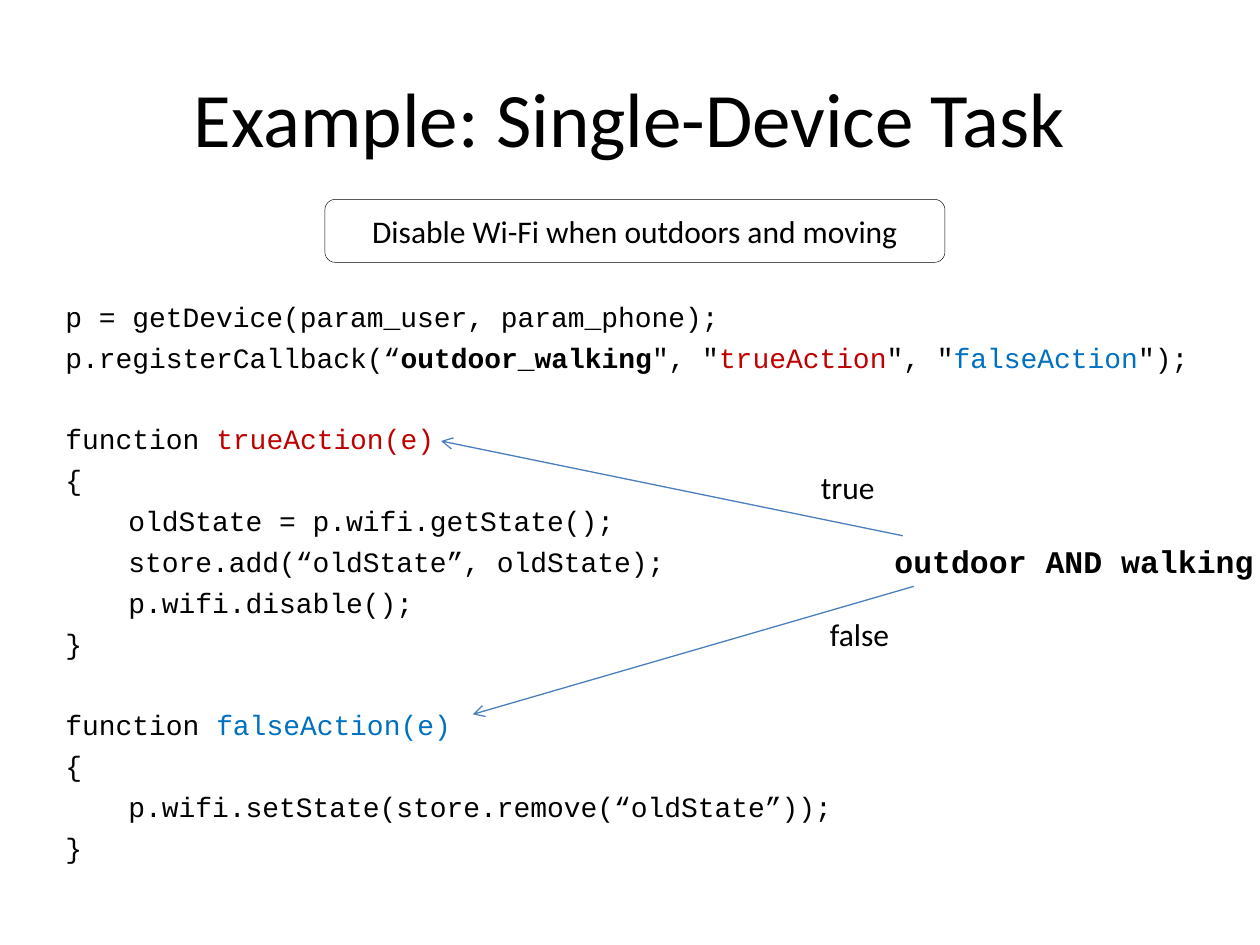
"""Build a slide that explains a single-device task with annotated callback code."""
from dataclasses import dataclass

from lxml import etree
from pptx import Presentation
from pptx.dml.color import RGBColor
from pptx.enum.shapes import MSO_CONNECTOR, MSO_SHAPE
from pptx.enum.text import MSO_ANCHOR, PP_ALIGN
from pptx.oxml.ns import qn
from pptx.util import Cm, Pt

ROUNDED = MSO_SHAPE.ROUNDED_RECTANGLE
STRAIGHT = MSO_CONNECTOR.STRAIGHT
MIDDLE = MSO_ANCHOR.MIDDLE
TOP = MSO_ANCHOR.TOP
CENTER = PP_ALIGN.CENTER
LEFT = PP_ALIGN.LEFT
BLANK_LAYOUT = 6


@dataclass(frozen=True)
class Theme:
    black: RGBColor = RGBColor(0x00, 0x00, 0x00)
    white: RGBColor = RGBColor(0xFF, 0xFF, 0xFF)
    red: RGBColor = RGBColor(0xC0, 0x00, 0x00)
    blue: RGBColor = RGBColor(0x00, 0x70, 0xC0)
    arrow: RGBColor = RGBColor(0x4B, 0x7E, 0xBC)
    body_font: str = "Calibri"
    code_font: str = "Courier New"
    title_size: Pt = Pt(44)
    label_size: Pt = Pt(18)
    code_size: Pt = Pt(16)
    line_gap: Pt = Pt(4.3)
    block_gap: Pt = Pt(26.7)
    frame_width: Pt = Pt(0.25)
    arrow_width: Pt = Pt(0.75)


THEME = Theme()

CODE_BLOCKS = [
    [
        [("p = getDevice(param_user, param_phone);", "plain")],
        [
            ("p.registerCallback(“", "plain"),
            ("outdoor_walking", "bold"),
            ("\", \"", "plain"),
            ("trueAction", "true"),
            ("\", \"", "plain"),
            ("falseAction", "false"),
            ("\");", "plain"),
        ],
    ],
    [
        [("function ", "plain"), ("trueAction(e)", "true")],
        [("{", "plain")],
        [("\toldState = p.wifi.getState();", "plain")],
        [("\tstore.add(“oldState”, oldState);", "plain")],
        [("\tp.wifi.disable();", "plain")],
        [("}", "plain")],
    ],
    [
        [("function ", "plain"), ("falseAction(e)", "false")],
        [("{", "plain")],
        [("\tp.wifi.setState(store.remove(“oldState”));", "plain")],
        [("}", "plain")],
    ],
]


def style_font(font, name, size, color=THEME.black, bold=False):
    font.name = name
    font.size = size
    font.color.rgb = color
    font.bold = bold


def write_text(shape, text, size, font_name=THEME.body_font, align=LEFT, anchor=TOP, bold=False):
    text_frame = shape.text_frame
    text_frame.text = text
    text_frame.vertical_anchor = anchor
    paragraph = text_frame.paragraphs[0]
    paragraph.alignment = align
    style_font(paragraph.runs[0].font, font_name, size, bold=bold)


def add_title(slide, text):
    shape = slide.shapes.add_textbox(Cm(1.27), Cm(0.76), Cm(22.86), Cm(3.18))
    shape.text_frame.word_wrap = True
    write_text(shape, text, THEME.title_size, align=CENTER, anchor=MIDDLE)


def add_task_box(slide, text):
    shape = slide.shapes.add_shape(ROUNDED, Cm(6.55), Cm(4.02), Cm(12.5), Cm(1.27))
    shape.shadow.inherit = False
    shape.fill.solid()
    shape.fill.fore_color.rgb = THEME.white
    shape.line.color.rgb = THEME.black
    shape.line.width = THEME.frame_width
    write_text(shape, text, THEME.label_size, align=CENTER, anchor=MIDDLE)


def add_code(slide, blocks):
    styles = {
        "plain": (THEME.black, False),
        "bold": (THEME.black, True),
        "true": (THEME.red, False),
        "false": (THEME.blue, False),
    }
    shape = slide.shapes.add_textbox(Cm(1.07), Cm(5.92), Cm(23.5), Cm(12.57))
    text_frame = shape.text_frame
    text_frame.word_wrap = True
    paragraph = text_frame.paragraphs[0]
    for block_index, block in enumerate(blocks):
        for line_index, line in enumerate(block):
            if block_index or line_index:
                paragraph = text_frame.add_paragraph()
            starts_block = block_index > 0 and line_index == 0
            paragraph.space_before = THEME.block_gap if starts_block else THEME.line_gap
            for text, style in line:
                run = paragraph.add_run()
                run.text = text
                style_font(run.font, THEME.code_font, THEME.code_size, *styles[style])


def add_label(slide, text, left, top, width, font_name=THEME.body_font, bold=False):
    shape = slide.shapes.add_textbox(Cm(left), Cm(top), Cm(width), Cm(1.02))
    shape.text_frame.word_wrap = False
    write_text(shape, text, THEME.label_size, font_name, bold=bold)


def add_arrow(slide, start, end):
    connector = slide.shapes.add_connector(STRAIGHT, *map(Cm, start + end))
    connector.line.color.rgb = THEME.arrow
    connector.line.width = THEME.arrow_width
    properties = connector.element.spPr
    etree.SubElement(properties.find(qn("a:ln")), qn("a:tailEnd"), type="arrow")
    etree.SubElement(properties, qn("a:effectLst"))


def main():
    presentation = Presentation()
    presentation.slide_width = Cm(25.4)
    presentation.slide_height = Cm(19.05)
    slide = presentation.slides.add_slide(presentation.slide_layouts[BLANK_LAYOUT])

    add_title(slide, "Example: Single-Device Task")
    add_code(slide, CODE_BLOCKS)
    add_task_box(slide, "Disable Wi-Fi when outdoors and moving")
    add_label(slide, "outdoor AND walking", 17.78, 10.8, 7.8, THEME.code_font, bold=True)
    add_arrow(slide, (18.2, 10.8), (8.89, 8.89))
    add_arrow(slide, (18.42, 11.82), (9.53, 14.4))
    add_label(slide, "true", 16.3, 9.31, 1.6)
    add_label(slide, "false", 16.48, 12.28, 1.73)

    presentation.save("out.pptx")


if __name__ == "__main__":
    main()
